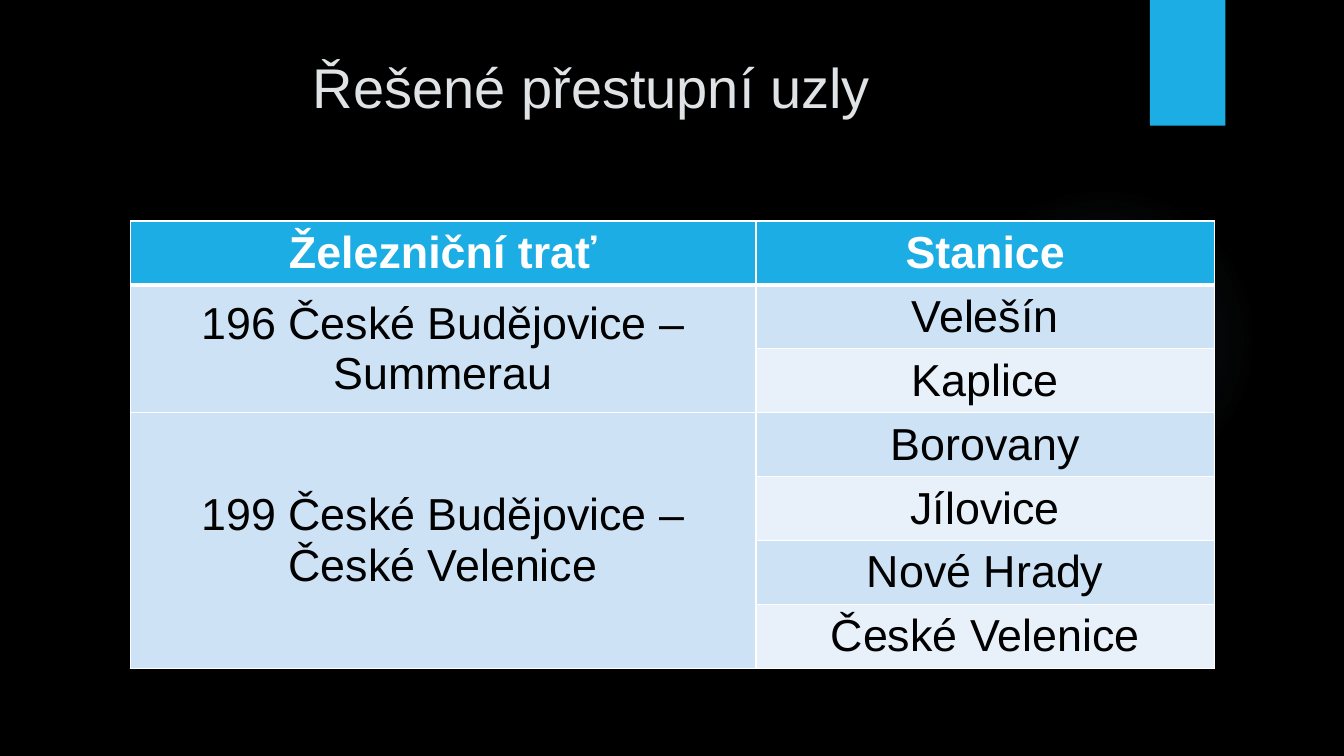
from lxml import etree
from pptx import Presentation
from pptx.dml.color import RGBColor
from pptx.enum.shapes import MSO_SHAPE as Shape
from pptx.enum.text import MSO_ANCHOR as Anchor, PP_ALIGN as Align
from pptx.oxml import parse_xml
from pptx.oxml.ns import nsdecls, qn
from pptx.util import Cm, Pt

# Content
TITLE = "Řešené přestupní uzly"
HEADERS = ["Železniční trať", "Stanice"]
LINES = [
    ("196 České Budějovice – Summerau", ["Velešín", "Kaplice"]),
    ("199 České Budějovice – České Velenice",
     ["Borovany", "Jílovice", "Nové Hrady", "České Velenice"]),
]

# Style
FONT = "Arial"
ACCENT, WHITE, BLACK = "1CADE4", "FFFFFF", "000000"
BANDS = ["CDE3F5", "E8F1FA"]
GLOW, GLOW_STOPS = "A0C1D5", [(0, 7), (36, 6), (69, 0)]
COLUMN_WIDTHS = [15.77, 11.56]
ROW_HEIGHT = 1.52


def color(value):
    return RGBColor.from_string(value)


def add_shape(kind, left, top, width, height, fill):
    shape = page.shapes.add_shape(kind, Cm(left), Cm(top), Cm(width), Cm(height))
    shape.shadow.inherit = False
    shape.fill.solid()
    shape.fill.fore_color.rgb = color(fill)
    shape.line.fill.background()
    return shape


def write(frame, text, size, text_color, bold=False):
    frame.text = text
    para = frame.paragraphs[0]
    para.alignment = Align.CENTER
    font = para.runs[0].font
    font.name, font.size, font.bold = FONT, Pt(size), bold
    font.color.rgb = color(text_color)


def set_borders(cell, top=1, bottom=1):
    properties = cell._tc.get_or_add_tcPr()
    for side, width in (("L", 1), ("R", 1), ("T", top), ("B", bottom)):
        line = etree.SubElement(properties, qn(f"a:ln{side}"), w=str(Pt(width)))
        fill = etree.SubElement(line, qn("a:solidFill"))
        etree.SubElement(fill, qn("a:srgbClr"), val=WHITE)


def fill_cell(row, column, text, fill):
    cell = table.cell(row, column)
    cell.vertical_anchor = Anchor.MIDDLE
    set_borders(cell, top=3 if row == 1 else 1, bottom=3 if row == 0 else 1)
    cell.fill.solid()
    cell.fill.fore_color.rgb = color(fill)
    if text:
        header = row == 0
        write(cell.text_frame, text, 32, WHITE if header else BLACK, header)


# Page
deck = Presentation()
deck.slide_width, deck.slide_height = Cm(33.87), Cm(19.05)
page = deck.slides.add_slide(deck.slide_layouts[6])
page.background.fill.solid()
page.background.fill.fore_color.rgb = color(BLACK)

# Faint glow and corner tab
glow = add_shape(Shape.OVAL, 23.9, 4.65, 7.82, 7.82, GLOW)
stops = "".join(
    f'<a:gs pos="{place * 1000}"><a:srgbClr val="{GLOW}">'
    f'<a:alpha val="{alpha * 1000}"/></a:srgbClr></a:gs>'
    for place, alpha in GLOW_STOPS)
gradient = parse_xml(
    f'<a:gradFill {nsdecls("a")}><a:gsLst>{stops}</a:gsLst><a:path path="circle">'
    '<a:fillToRect l="50000" t="50000" r="50000" b="50000"/></a:path></a:gradFill>')
glow_properties = glow._element.spPr
glow_properties.replace(glow_properties.find(qn("a:solidFill")), gradient)
add_shape(Shape.RECTANGLE, 28.98, 0, 1.9, 3.17, ACCENT)

# Title
box = page.shapes.add_textbox(Cm(1.83), Cm(1.04), Cm(26.14), Cm(3.89))
box.text_frame.word_wrap = True
box.text_frame.margin_top = Cm(0.28)
write(box.text_frame, TITLE, 40, "DFE3E5")

# Table of lines and stations
row_count = 1 + sum(len(stations) for _, stations in LINES)
table = page.shapes.add_table(
    row_count, len(HEADERS), Cm(3.28), Cm(5.57),
    Cm(sum(COLUMN_WIDTHS)), Cm(ROW_HEIGHT * row_count)).table
for column, width in zip(table.columns, COLUMN_WIDTHS):
    column.width = Cm(width)
for row in table.rows:
    row.height = Cm(ROW_HEIGHT)

for index, header in enumerate(HEADERS):
    fill_cell(0, index, header, ACCENT)
first = 1
for line_name, stations in LINES:
    for offset, station in enumerate(stations):
        row = first + offset
        fill_cell(row, 0, "" if offset else line_name, BANDS[0])
        fill_cell(row, 1, station, BANDS[(row - 1) % 2])
    last = first + len(stations) - 1
    table.cell(first, 0).merge(table.cell(last, 0))
    first = last + 1

deck.save("out.pptx")
